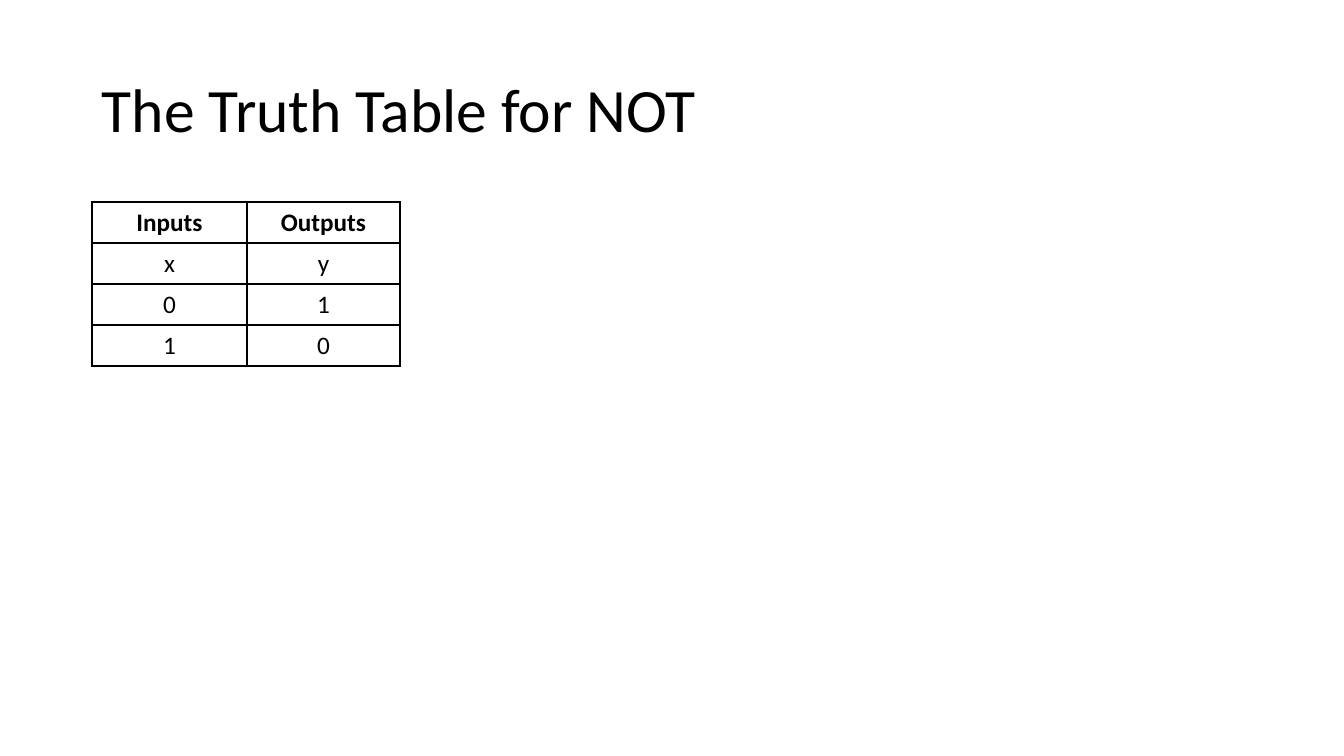
from lxml.etree import SubElement
from pptx import Presentation
from pptx.dml.color import RGBColor
from pptx.enum.text import MSO_ANCHOR as Anchor, PP_ALIGN as Align
from pptx.oxml.ns import qn
from pptx.util import Pt

EMU_PER_PX = 914400 / 100.8


def px(length):
    """Turn px into EMU."""
    return round(length * EMU_PER_PX)


def color(hex_string):
    """Turn a hex string into a colour."""
    return RGBColor.from_string(hex_string)


class SlideBuilder:
    """Holds the style and the current slide."""

    font = "Calibri"
    ink = "000000"
    border_width = Pt(1)

    def __init__(self, presentation):
        """Add a blank slide."""
        self.slide = presentation.slides.add_slide(presentation.slide_layouts[6])

    def run(self, paragraph, text, size, bold=False):
        """Add one styled run."""
        run = paragraph.add_run()
        run.text = text
        run.font.name = self.font
        run.font.size = Pt(size)
        run.font.bold = bold
        run.font.color.rgb = color(self.ink)

    def title(self, text, left, top, width, height):
        """Add the heading, centred vertically in its box."""
        box = self.slide.shapes.add_textbox(px(left), px(top), px(width), px(height))
        frame = box.text_frame
        frame.word_wrap = True
        frame.vertical_anchor = Anchor.MIDDLE
        heading = frame.paragraphs[0]
        heading.line_spacing = 0.9
        self.run(heading, text, 44)

    def borders(self, cell):
        """Draw a solid line on every side of a cell."""
        properties = cell._tc.get_or_add_tcPr()
        for side in ("a:lnL", "a:lnR", "a:lnT", "a:lnB"):
            line = SubElement(properties, qn(side), w=str(self.border_width))
            fill = SubElement(line, qn("a:solidFill"))
            SubElement(fill, qn("a:srgbClr"), val=self.ink)

    def table(self, rows, left, top, column_widths, row_height):
        """Add a plain bordered table with a bold first row."""
        width, height = sum(column_widths), row_height * len(rows)
        table = self.slide.shapes.add_table(
            len(rows), len(column_widths), px(left), px(top), px(width), px(height)
        ).table
        table.horz_banding = False
        for column, column_width in zip(table.columns, column_widths):
            column.width = px(column_width)
        for row_index, values in enumerate(rows):
            table.rows[row_index].height = px(row_height)
            for column_index, value in enumerate(values):
                cell = table.cell(row_index, column_index)
                self.borders(cell)
                cell.fill.background()
                paragraph = cell.text_frame.paragraphs[0]
                paragraph.alignment = Align.CENTER
                self.run(paragraph, value, 18, bold=row_index == 0)


def main():
    """Build the truth table slide."""
    presentation = Presentation()
    presentation.slide_width = px(1344)
    presentation.slide_height = px(756)
    builder = SlideBuilder(presentation)
    builder.title("The Truth Table for NOT", 92, 40, 1159, 146)
    truth_table = [("Inputs", "Outputs"), ("x", "y"), ("0", "1"), ("1", "0")]
    builder.table(truth_table, 92, 202, (155, 153), 41)
    presentation.save("out.pptx")


if __name__ == "__main__":
    main()
